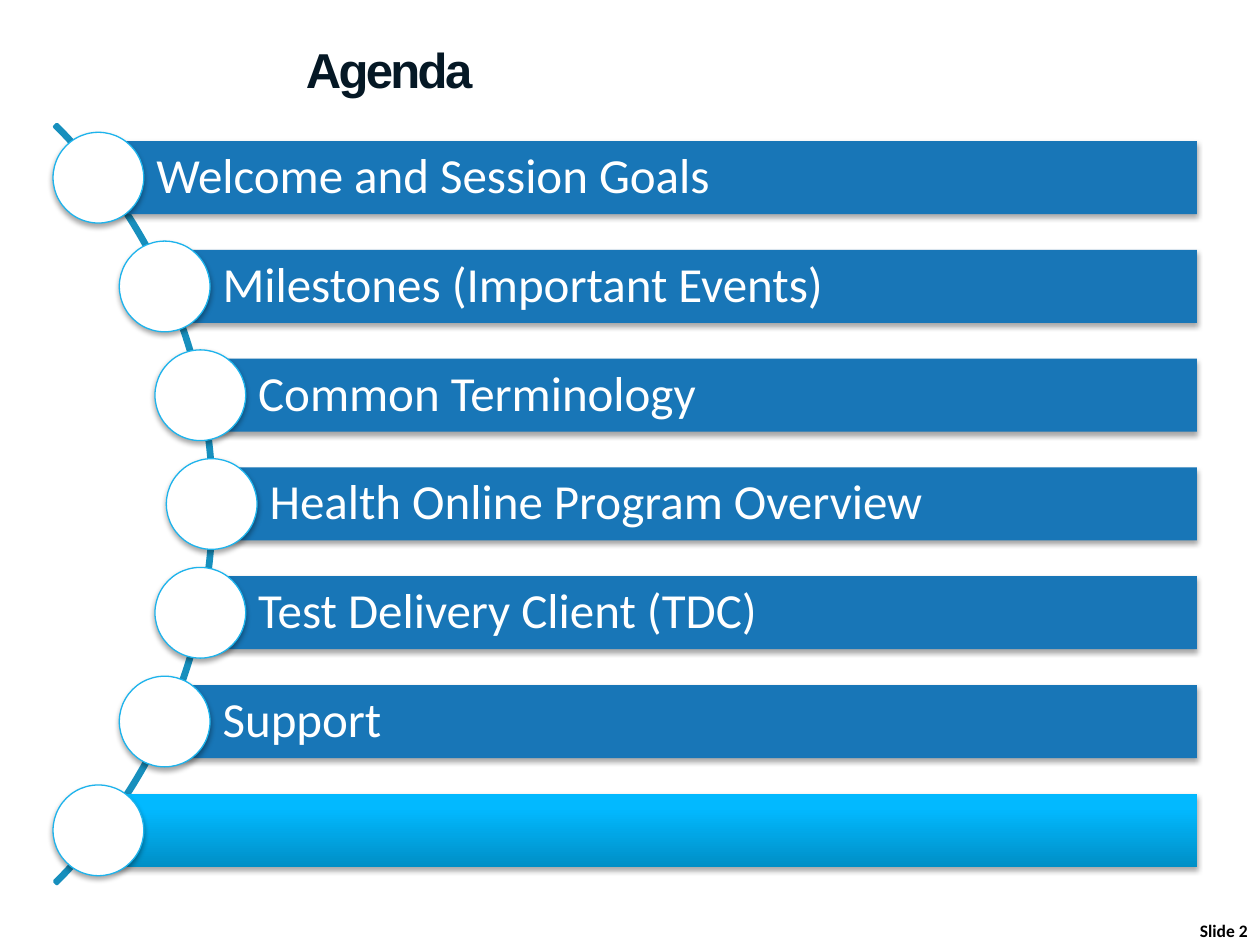
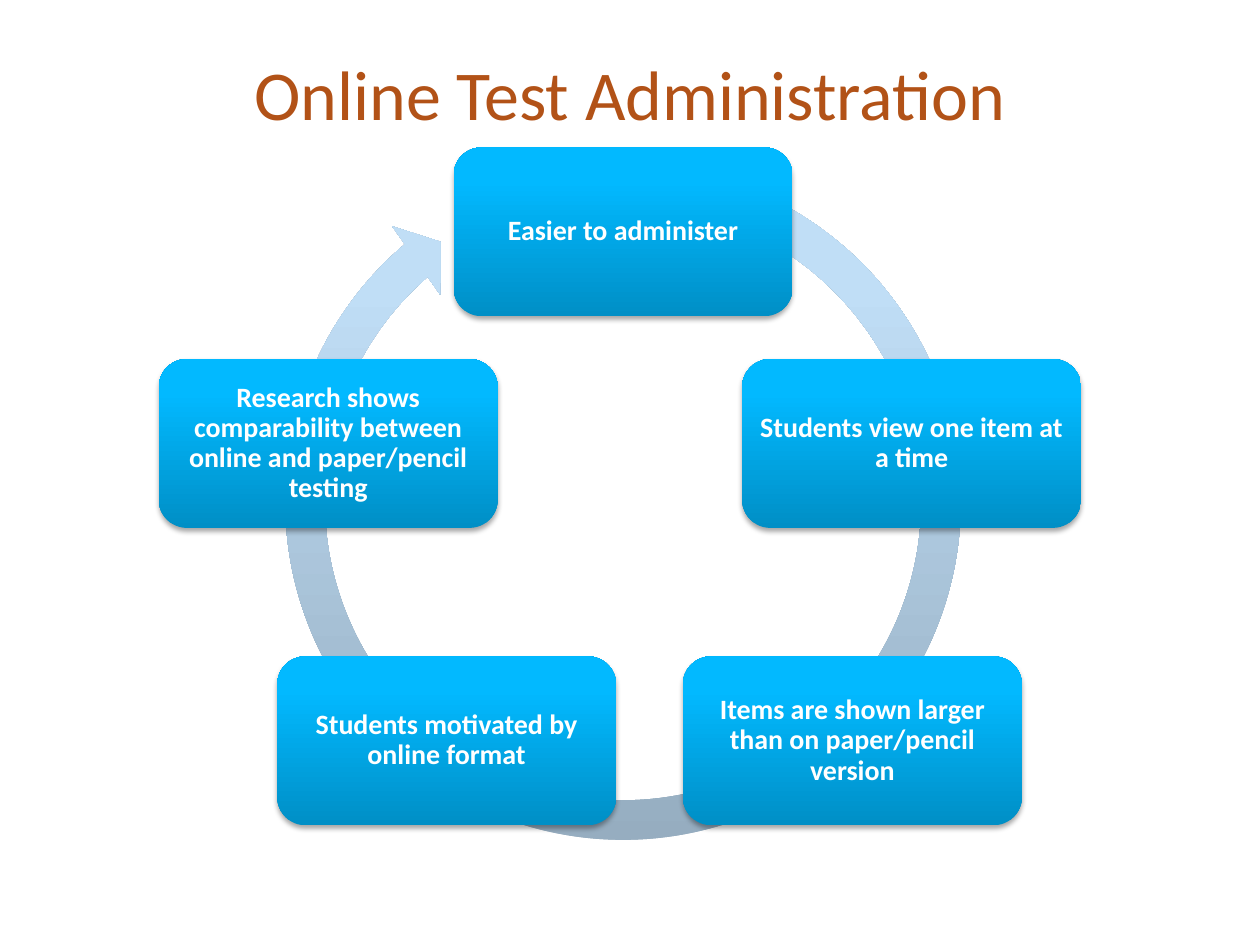
import copy
import math

import lxml.etree
import pptx
import pptx.dml.color
import pptx.enum.shapes
import pptx.enum.text
import pptx.oxml.ns
import pptx.util

Inches = pptx.util.Inches
Pt = pptx.util.Pt
Kind = pptx.enum.shapes.MSO_SHAPE
Align = pptx.enum.text.PP_ALIGN
Anchor = pptx.enum.text.MSO_ANCHOR
qn = pptx.oxml.ns.qn

COLORS = {
    "white": "FFFFFF", "black": "000000", "navy": "051825", "rust": "B25217",
    "bar": "1876B7", "arc": "178FBD", "ring": "1DB3EC",
}
# Gradient stops run from the bottom edge to the top
BLUE = [(0, "008FC6"), (0.8, "02B9FF"), (1, "03BAFF")]
PALE = [(0, "94ABBE"), (0.8, "C0DEF6"), (1, "C0DFF8")]


def rgb(code):
    return pptx.dml.color.RGBColor.from_string(code)


class Deck:
    """Holds the shared style and the current slide."""

    font = "Calibri"

    def __init__(self):
        self.file = pptx.Presentation()
        self.file.slide_width = Inches(10)
        self.file.slide_height = Inches(7.5)
        self.slide = None

    def add_slide(self):
        self.slide = self.file.slides.add_slide(self.file.slide_layouts[6])

    def shape(self, kind, box, fill=None, line=None, width=0.75, shade=True, adjust=()):
        item = self.slide.shapes.add_shape(kind, *map(Inches, box))
        for index, value in enumerate(adjust):
            item.adjustments[index] = value
        if fill is None:
            item.fill.background()
        elif isinstance(fill, list):
            self.blend(item, fill)
        else:
            item.fill.solid()
            item.fill.fore_color.rgb = rgb(COLORS[fill])
        if line:
            item.line.color.rgb = rgb(COLORS[line])
            item.line.width = Pt(width)
        else:
            item.line.fill.background()
        item.shadow.inherit = False
        if shade:
            self.shade(item)
        return item

    def blend(self, item, stops):
        item.fill.gradient()
        item.fill.gradient_angle = 90
        holder = item._element.spPr.find(".//" + qn("a:gsLst"))
        holder.append(copy.deepcopy(holder[-1]))
        for stop, (place, code) in zip(item.fill.gradient_stops, stops):
            stop.position = place
            stop.color.rgb = rgb(code)

    def shade(self, item):
        effects = item._element.spPr.find(qn("a:effectLst"))
        outer = lxml.etree.SubElement(
            effects, qn("a:outerShdw"), blurRad=str(Pt(3.1)), dist=str(Pt(1.8)),
            dir="5400000", rotWithShape="0")
        tint = lxml.etree.SubElement(outer, qn("a:srgbClr"), val=COLORS["black"])
        lxml.etree.SubElement(tint, qn("a:alpha"), val="35000")

    def letter(self, item, text, size, color="white", bold=False, align=Align.LEFT,
               anchor=Anchor.MIDDLE, insets=(0.1, 0.05, 0.1, 0.05), lead=None, font=None):
        frame = item.text_frame
        frame.text = text
        frame.word_wrap = True
        frame.vertical_anchor = anchor
        (frame.margin_left, frame.margin_top,
         frame.margin_right, frame.margin_bottom) = map(Inches, insets)
        para = frame.paragraphs[0]
        para.alignment = align
        if lead:
            para.line_spacing = lead
        run = para.runs[0]
        run.font.name = font or self.font
        run.font.size = Pt(size)
        run.font.bold = bold
        run.font.color.rgb = rgb(COLORS[color])
        return run

    def label(self, box, text, size, **style):
        item = self.slide.shapes.add_textbox(*map(Inches, box))
        return self.letter(item, text, size, **style)


def agenda(deck):
    deck.add_slide()

    # Curve behind the list
    deck.shape(Kind.BLOCK_ARC, (-6.82, -0.26, 8.52, 8.52), line="arc", width=2,
               shade=False, adjust=(189, 27, 0.003))

    # Bars start at the dots, which follow a circle about (hub, middle)
    topics = ["Welcome and Session Goals", "Milestones (Important Events)",
              "Common Terminology", "Health Online Program Overview",
              "Test Delivery Client (TDC)", "Support", ""]
    first, last, right = 1.41, 6.59, 9.5
    hub, radius, middle = -2.5, 4.18, (first + last) / 2
    high, dot = 0.58, 0.72
    step = (last - first) / (len(topics) - 1)
    for index, topic in enumerate(topics):
        y = first + index * step
        x = hub + math.sqrt(radius ** 2 - (y - middle) ** 2)
        bar = deck.shape(Kind.RECTANGLE, (x, y - high / 2, right - x, high),
                         fill="bar" if topic else BLUE)
        if topic:
            deck.letter(bar, topic, 28, insets=(0.46, 0.08, 0.08, 0.08), lead=0.9)
        deck.shape(Kind.OVAL, (x - dot / 2, y - dot / 2, dot, dot),
                   fill="white", line="ring")

    # Title and slide number
    title = deck.label((2.33, 0, 7.67, 0.83), "Agenda", 28, color="navy", bold=True,
                       anchor=Anchor.BOTTOM, font="Arial")
    title._r.get_or_add_rPr().set("spc", "-150")
    deck.label((9, 7.25, 1, 0.25), "Slide 2", 10, color="black", bold=True,
               align=Align.RIGHT, anchor=Anchor.TOP)


def cycle(deck):
    deck.add_slide()
    deck.label((0.5, 0.3, 9, 0.87), "Online Test Administration", 40, color="rust",
               align=Align.CENTER)

    # Ring arrow
    deck.shape(Kind.CIRCULAR_ARROW, (2.09, 1.13, 5.71, 5.71), fill=PALE, shade=False,
               adjust=(0.055, 3.307, 137.661, 173.919, 0.058))

    # Cards, clockwise from the top
    cards = [
        (3.6, 1.17, "Easier to administer"),
        (5.89, 2.85, "Students view one item at a time"),
        (5.42, 5.21, "Items are shown larger than on paper/pencil version"),
        (2.2, 5.21, "Students motivated by online format"),
        (1.26, 2.85, "Research shows comparability between online and "
                     "paper/pencil testing"),
    ]
    for left, top, text in cards:
        card = deck.shape(Kind.ROUNDED_RECTANGLE, (left, top, 2.69, 1.34), fill=BLUE)
        deck.letter(card, text, 16, bold=True, align=Align.CENTER,
                    insets=(0.07,) * 4, lead=0.9)


def main():
    deck = Deck()
    agenda(deck)
    cycle(deck)
    deck.file.save("out.pptx")


if __name__ == "__main__":
    main()
